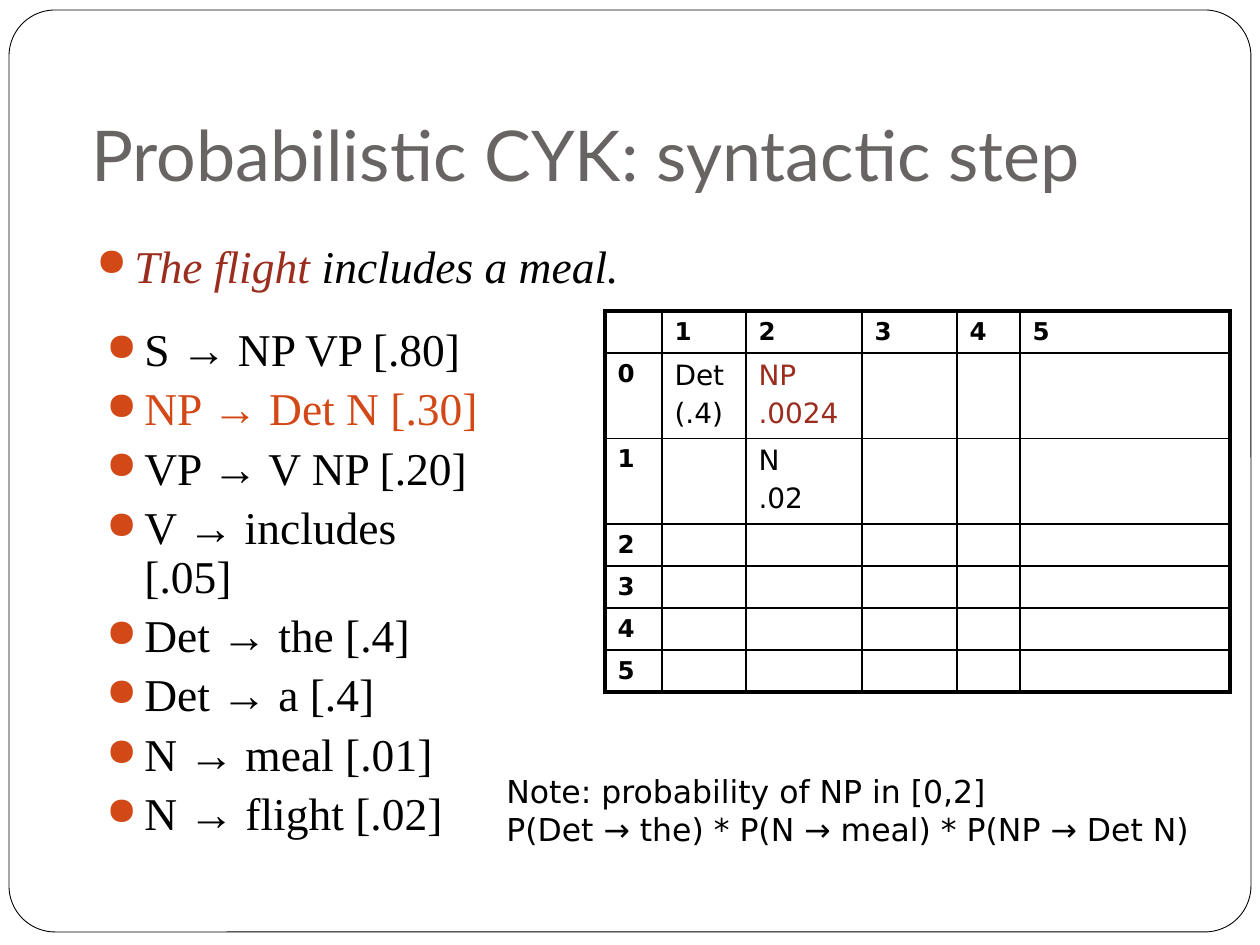
from dataclasses import dataclass

from lxml.etree import SubElement
from pptx import Presentation
from pptx.dml.color import RGBColor as Color
from pptx.enum.shapes import MSO_SHAPE as Shape
from pptx.enum.text import MSO_ANCHOR as Anchor
from pptx.oxml.ns import qn
from pptx.util import Pt


@dataclass(frozen=True)
class Theme:
    black: str = "000000"
    white: str = "FFFFFF"
    gray: str = "696464"
    orange: str = "D34817"
    red: str = "9B2D1F"
    heading: str = "Lato"
    serif: str = "Times New Roman"
    sans: str = "DejaVu Sans"
    title_size: int = 40
    bullet_size: int = 26
    note_size: int = 18
    entry_size: int = 16
    label_size: int = 14


theme = Theme()
PX = 914400 // 126


def style(para, font, size, color, bold=False, italic=False):
    for span in para.runs:
        span.font.name = font
        span.font.size = Pt(size)
        span.font.color.rgb = Color.from_string(color)
        span.font.bold = bold
        span.font.italic = italic


def add_bullet(para, line_spacing):
    para.line_spacing = line_spacing
    para.space_before = Pt(5.8)
    props = para._p.get_or_add_pPr()
    props.set("marL", str(38 * PX))
    props.set("indent", str(-38 * PX))
    color = SubElement(props, qn("a:buClr"))
    SubElement(color, qn("a:srgbClr"), val=theme.orange)
    SubElement(props, qn("a:buSzPct"), val="85000")
    SubElement(props, qn("a:buChar"), char="●")


deck = Presentation()
deck.slide_width = 1260 * PX
deck.slide_height = 945 * PX
page = deck.slides.add_slide(deck.slide_layouts[5])

frame = page.shapes.add_shape(Shape.ROUNDED_RECTANGLE, 9 * PX, 10 * PX, 1242 * PX, 922 * PX)
frame.adjustments[0] = 0.05
frame.shadow.inherit = False
frame.fill.solid()
frame.fill.fore_color.rgb = Color.from_string(theme.white)
frame.line.color.rgb = Color.from_string(theme.black)
frame.line.width = Pt(0.5)
page.shapes._spTree.insert(2, frame._element)

title = page.shapes.title
title.left, title.top, title.width, title.height = 79 * PX, 42 * PX, 1102 * PX, 167 * PX
title.text_frame.text = "Probabilistic CYK: syntactic step"
title.text_frame.vertical_anchor = Anchor.BOTTOM
title.text_frame.margin_bottom = 13 * PX
title_para = title.text_frame.paragraphs[0]
title_para.alignment = 1
style(title_para, theme.heading, theme.title_size, theme.gray)

sentence_box = page.shapes.add_textbox(84 * PX, 242 * PX, 1102 * PX, 63 * PX)
sentence_box.text_frame.word_wrap = True
sentence = sentence_box.text_frame.paragraphs[0]
for words in ("The flight", " includes a meal."):
    sentence.add_run().text = words
style(sentence, theme.serif, theme.bullet_size, theme.black, italic=True)
sentence.runs[0].font.color.rgb = Color.from_string(theme.red)
add_bullet(sentence, 0.8)

column_widths = [57, 84, 116, 95, 63, 210]
row_heights = [42, 83, 83, 41, 41, 41, 41]
last_row, last_column = len(row_heights) - 1, len(column_widths) - 1
entries = {(1, 1): "Det\n(.4)", (1, 2): "NP\n.0024", (2, 2): "N\n.02"}
entries.update({(0, column): str(column) for column in range(1, last_column + 1)})
entries.update({(row, 0): str(row - 1) for row in range(1, last_row + 1)})

chart = page.shapes.add_table(
    len(row_heights), len(column_widths), 605 * PX, 311 * PX,
    sum(column_widths) * PX, sum(row_heights) * PX,
).table
chart.first_row = chart.horz_banding = False
for column, width in enumerate(column_widths):
    chart.columns[column].width = width * PX
for row, height in enumerate(row_heights):
    chart.rows[row].height = height * PX
    for column in range(len(column_widths)):
        cell = chart.cell(row, column)
        outer_edges = {
            "a:lnL": column == 0,
            "a:lnR": column == last_column,
            "a:lnT": row == 0,
            "a:lnB": row == last_row,
        }
        cell_props = cell._tc.get_or_add_tcPr()
        for edge, outer in outer_edges.items():
            border = SubElement(cell_props, qn(edge), w=str(Pt(2.25 if outer else 1)))
            border_fill = SubElement(border, qn("a:solidFill"))
            SubElement(border_fill, qn("a:srgbClr"), val=theme.black)
        cell.fill.background()
        if (row, column) not in entries:
            end = cell.text_frame.paragraphs[0]._p.get_or_add_endParaRPr()
            end.set("sz", str(theme.label_size * 100))
            continue
        cell.text_frame.text = entries[row, column]
        label = row == 0 or column == 0
        size = theme.label_size if label else theme.entry_size
        color = theme.red if (row, column) == (1, 2) else theme.black
        for para in cell.text_frame.paragraphs:
            para.space_before = Pt(size * 0.2)
            style(para, theme.sans, size, color, bold=label)

rules = [
    "S → NP VP [.80]",
    "NP → Det N [.30]",
    "VP → V NP [.20]",
    "V → includes [.05]",
    "Det → the [.4]",
    "Det → a [.4]",
    "N → meal [.01]",
    "N → flight [.02]",
]
rules_box = page.shapes.add_textbox(94 * PX, 321 * PX, 410 * PX, 571 * PX)
rules_box.text_frame.word_wrap = True
rules_box.text_frame.text = "\n".join(rules)
for para in rules_box.text_frame.paragraphs:
    color = theme.orange if para.text.startswith("NP") else theme.black
    style(para, theme.serif, theme.bullet_size, color)
    add_bullet(para, 0.9)

note_box = page.shapes.add_textbox(494 * PX, 766 * PX, 760 * PX, 89 * PX)
note_box.text_frame.word_wrap = False
note_box.text_frame.text = (
    "Note: probability of NP in [0,2]\nP(Det → the) * P(N → meal) * P(NP → Det N)"
)
for para in note_box.text_frame.paragraphs:
    style(para, theme.sans, theme.note_size, theme.black)

deck.save("out.pptx")
